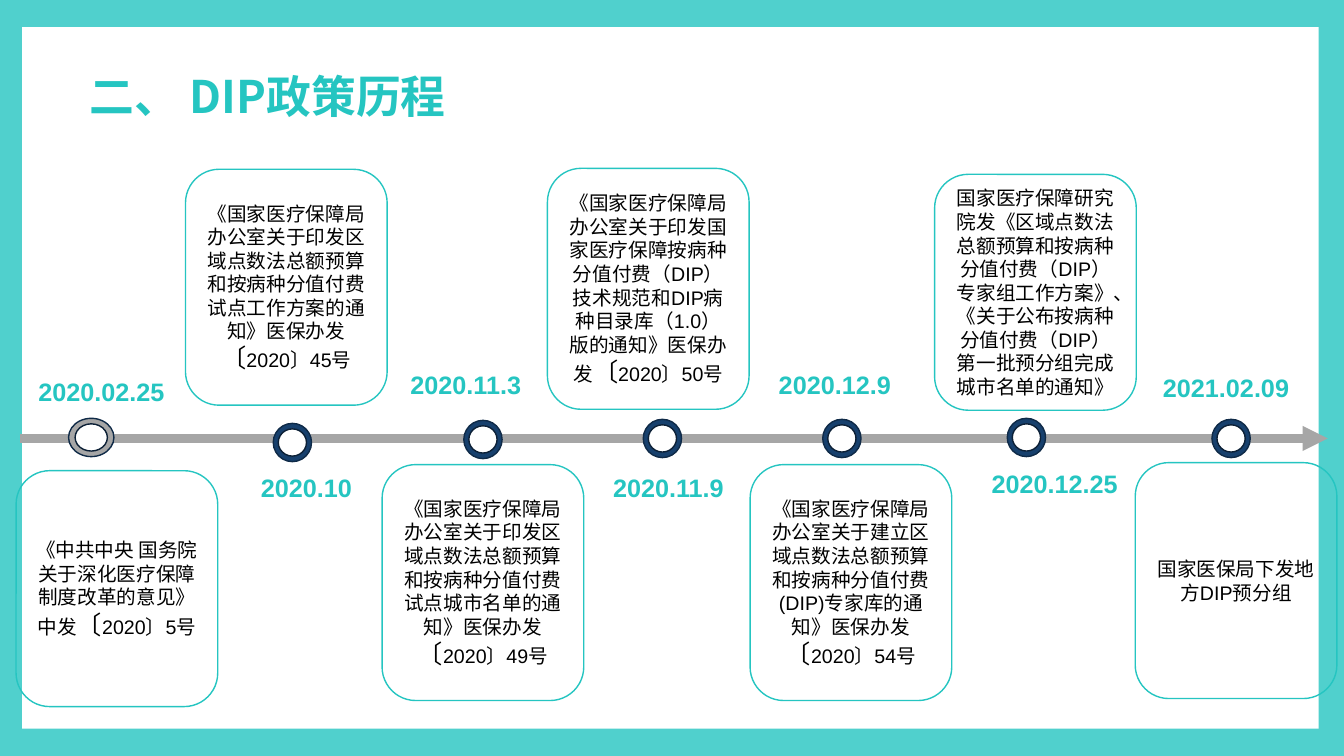
from lxml import etree
from pptx import Presentation
from pptx.dml.color import RGBColor
from pptx.enum.shapes import MSO_CONNECTOR, MSO_SHAPE
from pptx.enum.text import MSO_ANCHOR, PP_ALIGN
from pptx.oxml.ns import qn
from pptx.util import Inches, Pt

RECTANGLE = MSO_SHAPE.RECTANGLE
ROUNDED = MSO_SHAPE.ROUNDED_RECTANGLE
OVAL = MSO_SHAPE.OVAL
STRAIGHT = MSO_CONNECTOR.STRAIGHT
MIDDLE, TOP = MSO_ANCHOR.MIDDLE, MSO_ANCHOR.TOP
CENTER, LEFT = PP_ALIGN.CENTER, PP_ALIGN.LEFT

TEAL = RGBColor(0x25, 0xC5, 0xC1)
WHITE = RGBColor(0xFF, 0xFF, 0xFF)
BLACK = RGBColor(0x00, 0x00, 0x00)
GRAY = RGBColor(0xA6, 0xA6, 0xA6)
NAVY = RGBColor(0x17, 0x40, 0x6D)
RING_EDGE = RGBColor(0x0F, 0x2A, 0x47)
HOLE_EDGE = RGBColor(0x0C, 0x20, 0x36)

CJK_FONT = "Noto Sans CJK SC"
TITLE_FORMAT = {"name": CJK_FONT, "size": Pt(32), "bold": True}
DATE_FORMAT = {"name": "Arial", "size": Pt(18), "bold": True}
BODY_FORMAT = {"name": "Arial", "size": Pt(14), "bold": False}
BRACKET_FORMAT = {"name": "Arial", "size": Pt(18), "bold": False}

deck = Presentation()
deck.slide_width, deck.slide_height = Inches(13.33), Inches(7.5)
page = deck.slides.add_slide(deck.slide_layouts[5])


def add_shape(kind, left, top, width, height, fill=None, edge=None):
    shape = page.shapes.add_shape(kind, Inches(left), Inches(top), Inches(width), Inches(height))
    shape.shadow.inherit = False
    if fill is None:
        shape.fill.background()
    else:
        shape.fill.solid()
        shape.fill.fore_color.rgb = fill
    if edge is None:
        shape.line.fill.background()
    else:
        shape.line.color.rgb = edge
        shape.line.width = Pt(1)
    return shape


def write_spans(box, spans, color, anchor=MIDDLE, alignment=CENTER):
    frame = box.text_frame
    frame.word_wrap = True
    frame.vertical_anchor = anchor
    para = frame.paragraphs[0]
    para.alignment = alignment
    for text, text_format in spans:
        span = para.add_run()
        span.text = text
        for name, value in text_format.items():
            setattr(span.font, name, value)
        span.font.color.rgb = color
        east_asian = etree.SubElement(span.font._element, qn("a:ea"))
        east_asian.set("typeface", CJK_FONT)
    return para


for band_top in (0, 3.75):
    band = add_shape(RECTANGLE, 0, band_top, 13.33, 3.75, TEAL)
    band_color = band.fill._xPr.find(f".//{qn('a:srgbClr')}")
    etree.SubElement(band_color, qn("a:alpha")).set("val", "80000")
add_shape(RECTANGLE, 0.22, 0.27, 12.86, 6.96, WHITE)

axis = page.shapes.add_connector(STRAIGHT, Inches(0.2), Inches(4.35), Inches(13.17), Inches(4.35))
axis.line.color.rgb = GRAY
axis.line.width = Pt(6)
etree.SubElement(axis.line._get_or_add_ln(), qn("a:tailEnd")).set("type", "triangle")
etree.SubElement(axis._element.spPr, qn("a:effectLst"))

rings = [
    (0.68, 4.15, 0.45, 0.32, GRAY),
    (2.71, 4.2, 0.38, 0.28, NAVY),
    (4.6, 4.17, 0.38, 0.28, NAVY),
    (6.38, 4.16, 0.38, 0.28, NAVY),
    (8.16, 4.16, 0.38, 0.28, NAVY),
    (9.99, 4.15, 0.38, 0.28, NAVY),
    (12.02, 4.16, 0.38, 0.28, NAVY),
]
RING_HEIGHT, HOLE_HEIGHT = 0.38, 0.27
for left, top, width, hole_width, fill in rings:
    add_shape(OVAL, left, top, width, RING_HEIGHT, fill, RING_EDGE)
    add_shape(OVAL, left + (width - hole_width) / 2, top + (RING_HEIGHT - HOLE_HEIGHT) / 2,
              hole_width, HOLE_HEIGHT, WHITE, HOLE_EDGE)

dates = [
    ("2020.02.25", 0.2, 3.65, 1.61),
    ("2020.10", 2.41, 4.61, 1.26),
    ("2020.11.3", 3.87, 3.58, 1.5),
    ("2020.11.9", 5.88, 4.61, 1.5),
    ("2020.12.9", 7.5, 3.58, 1.56),
    ("2020.12.25", 9.66, 4.57, 1.6),
    ("2021.02.09", 11.36, 3.61, 1.6),
]
for date, left, top, width in dates:
    date_box = page.shapes.add_textbox(Inches(left), Inches(top), Inches(width), Inches(0.46))
    write_spans(date_box, [(date, DATE_FORMAT)], TEAL)

policies = [
    (0.16, 4.67, 2.34, "《中共中央 国务院 关于深化医疗保障制度改革的意见》中发〔2020〕5号"),
    (1.84, 1.68, 2.34, "《国家医疗保障局办公室关于印发区域点数法总额预算和按病种分值付费试点工作方案的通知》医保办发〔2020〕45号"),
    (3.79, 4.61, 2.34, "《国家医疗保障局办公室关于印发区域点数法总额预算和按病种分值付费试点城市名单的通知》医保办发〔2020〕49号"),
    (5.43, 1.67, 2.39, "《国家医疗保障局办公室关于印发国家医疗保障按病种分值付费（DIP）技术规范和DIP病种目录库（1.0）版的通知》医保办发〔2020〕50号"),
    (7.44, 4.61, 2.34, "《国家医疗保障局办公室关于建立区域点数法总额预算和按病种分值付费(DIP)专家库的通知》医保办发〔2020〕54号"),
    (9.27, 1.73, 2.34, "国家医疗保障研究院发《区域点数法总额预算和按病种分值付费（DIP）专家组工作方案》、《关于公布按病种分值付费（DIP）第一批预分组完成城市名单的通知》"),
    (11.26, 4.59, 2.34, "国家医保局下发地方DIP预分组"),
]
for left, top, height, policy in policies:
    policy_box = add_shape(ROUNDED, left, top, 2, height, edge=TEAL)
    name, bracket, number = policy.partition("〔")
    parts = [(name, BODY_FORMAT), (bracket, BRACKET_FORMAT), (number, BODY_FORMAT)]
    write_spans(policy_box, [part for part in parts if part[0]], BLACK)

title = page.shapes.title
title.left, title.top, title.width, title.height = Inches(0.79), Inches(0.58), Inches(4), Inches(0.64)
title_para = write_spans(title, [("二、 DIP政策历程", TITLE_FORMAT)], TEAL, TOP, LEFT)
title_para.line_spacing = Pt(42)
page.shapes._spTree.append(title._element)

deck.save("out.pptx")
